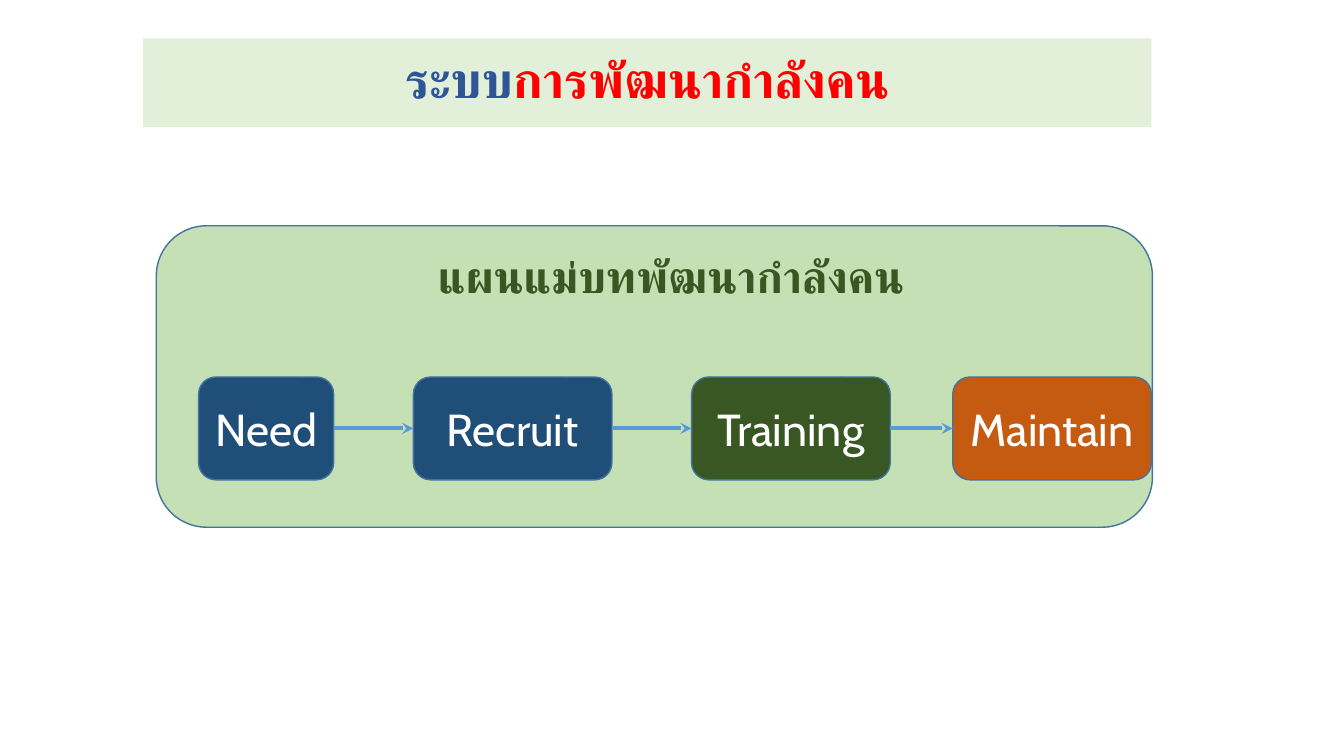
"""Build a slide showing the four steps of a workforce development system."""
from lxml.etree import SubElement
from pptx import Presentation
from pptx.dml.color import RGBColor
from pptx.enum.shapes import MSO_CONNECTOR, MSO_SHAPE
from pptx.enum.text import MSO_ANCHOR, MSO_AUTO_SIZE, PP_ALIGN
from pptx.oxml.ns import qn
from pptx.util import Inches, Pt

FONT = "Cabin"
WHITE = RGBColor(0xFF, 0xFF, 0xFF)
PALE_GREEN = RGBColor(0xE2, 0xF0, 0xD9)
LIGHT_GREEN = RGBColor(0xC5, 0xE0, 0xB4)
DARK_GREEN = RGBColor(0x38, 0x57, 0x23)
NAVY = RGBColor(0x1F, 0x4E, 0x79)
TITLE_BLUE = RGBColor(0x2F, 0x55, 0x97)
RED = RGBColor(0xFF, 0x00, 0x00)
ORANGE = RGBColor(0xC5, 0x5A, 0x11)
OUTLINE = RGBColor(0x43, 0x73, 0x9E)
ARROW_BLUE = RGBColor(0x5B, 0x9B, 0xD5)


def add_span(para, text, size, color, bold=False):
    para.alignment = PP_ALIGN.CENTER
    span = para.add_run()
    span.text = text
    span.font.size = Pt(size)
    span.font.bold = bold
    span.font.color.rgb = color
    span.font.name = FONT
    SubElement(span.font._element, qn("a:cs"), typeface=FONT)


def add_rounded_box(left, top, width, height, fill):
    box = page.shapes.add_shape(
        MSO_SHAPE.ROUNDED_RECTANGLE,
        Inches(left), Inches(top), Inches(width), Inches(height))
    box.shadow.inherit = False
    box.fill.solid()
    box.fill.fore_color.rgb = fill
    box.line.color.rgb = OUTLINE
    box.line.width = Pt(1)
    return box


deck = Presentation()
deck.slide_width, deck.slide_height = Inches(13.33), Inches(7.5)
page = deck.slides.add_slide(deck.slide_layouts[5])

title = page.shapes.title
title.left, title.top = Inches(1.42), Inches(0.38)
title.width, title.height = Inches(10), Inches(0.88)
title.fill.solid()
title.fill.fore_color.rgb = PALE_GREEN
title.text_frame.auto_size = MSO_AUTO_SIZE.NONE
title.text_frame.vertical_anchor = MSO_ANCHOR.MIDDLE
title_para = title.text_frame.paragraphs[0]
title_para.line_spacing = 0.9
add_span(title_para, "ระบบ", 36, TITLE_BLUE, bold=True)
add_span(title_para, "การพัฒนากำลังคน", 36, RED, bold=True)

add_rounded_box(1.55, 2.24, 9.88, 2.99, LIGHT_GREEN)

steps = [
    ("Need", 1.97, 1.34, NAVY),
    ("Recruit", 4.1, 1.97, NAVY),
    ("Training", 6.86, 1.97, DARK_GREEN),
    ("Maintain", 9.45, 1.97, ORANGE),
]
step_boxes = []
for label, left, width, fill in steps:
    box = add_rounded_box(left, 3.74, width, 1.02, fill)
    box.text_frame.vertical_anchor = MSO_ANCHOR.MIDDLE
    add_span(box.text_frame.paragraphs[0], label, 32, WHITE)
    step_boxes.append(box)

for before, after in zip(step_boxes, step_boxes[1:]):
    middle = before.top + before.height // 2
    arrow = page.shapes.add_connector(
        MSO_CONNECTOR.STRAIGHT,
        before.left + before.width, middle, after.left, middle)
    arrow.begin_connect(before, 3)
    arrow.end_connect(after, 1)
    arrow.line.color.rgb = ARROW_BLUE
    arrow.line.width = Pt(2.75)
    SubElement(arrow.line._get_or_add_ln(), qn("a:tailEnd"), type="stealth")
    SubElement(arrow._element.spPr, qn("a:effectLst"))

heading = page.shapes.add_textbox(
    Inches(3.86), Inches(2.42), Inches(5.59), Inches(0.64))
heading.text_frame.word_wrap = True
heading.text_frame.auto_size = MSO_AUTO_SIZE.SHAPE_TO_FIT_TEXT
add_span(heading.text_frame.paragraphs[0], "แผนแม่บทพัฒนากำลังคน", 32,
         DARK_GREEN, bold=True)

deck.save("out.pptx")
